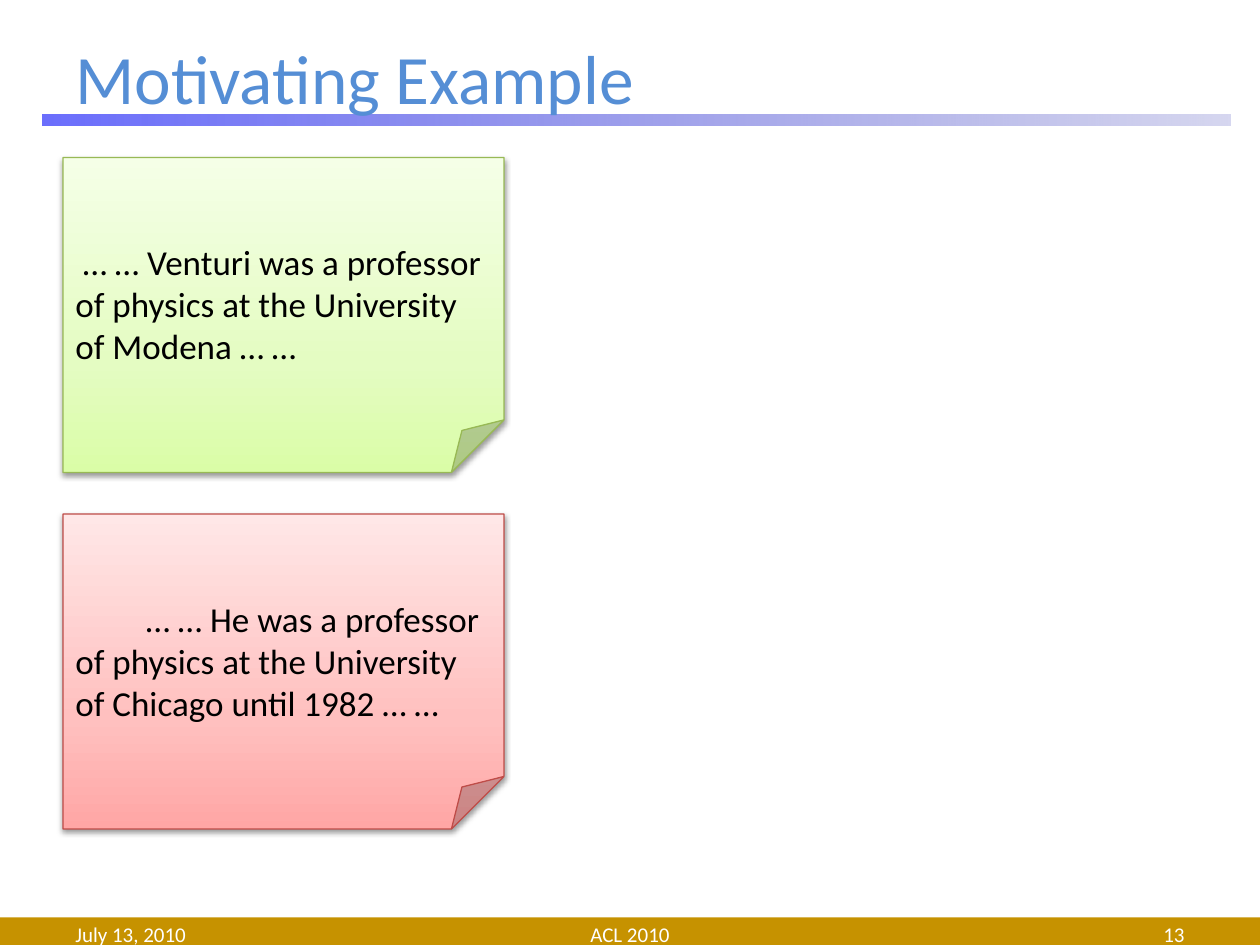
from lxml import etree
from pptx import Presentation
from pptx.dml.color import RGBColor
from pptx.enum.shapes import MSO_SHAPE
from pptx.enum.text import MSO_ANCHOR, PP_ALIGN
from pptx.oxml.ns import qn
from pptx.util import Inches, Pt

RECTANGLE, FOLDED = MSO_SHAPE.RECTANGLE, MSO_SHAPE.FOLDED_CORNER
TOP, MIDDLE = MSO_ANCHOR.TOP, MSO_ANCHOR.MIDDLE
LEFT, CENTER, RIGHT = PP_ALIGN.LEFT, PP_ALIGN.CENTER, PP_ALIGN.RIGHT
FONT = "Calibri"
WHITE, BLACK, BLUE, GOLD = "FFFFFF", "000000", "558ED5", "C69200"
GREEN_STOPS = [(0, "DAFDA7", 100), (35, "E4FCC2", 100), (100, "F5FFE7", 100)]
RED_STOPS = [(0, "FFA6A5", 100), (35, "FFC0BF", 100), (100, "FFE7E7", 100)]
RULE_STOPS = [(0, "464AFC", 80), (100, "3235B4", 20)]


def rgb(value):
    """Turn a hex string into a colour."""
    return RGBColor.from_string(value)


def add_color(parent, value, opacity):
    """Append a colour with an opacity in percent to an XML element."""
    color = etree.SubElement(parent, qn("a:srgbClr"), val=value)
    etree.SubElement(color, qn("a:alpha"), val=str(opacity * 1000))


def write_text(shape, text, size, color, align=LEFT, anchor=MIDDLE, indent=0, top=0.05):
    """Write one formatted paragraph into a shape."""
    frame = shape.text_frame
    frame.word_wrap = True
    frame.vertical_anchor = anchor
    frame.margin_top = Inches(top)
    para = frame.paragraphs[0]
    para.alignment = align
    para._p.get_or_add_pPr().set("indent", str(Inches(indent)))
    span = para.add_run()
    span.text = text
    span.font.name = FONT
    span.font.size = Pt(size)
    span.font.color.rgb = rgb(color)


def add_text(page, box, text, **style):
    """Add a text box with formatted text."""
    shape = page.shapes.add_textbox(*map(Inches, box))
    write_text(shape, text, **style)


def add_panel(page, kind, box):
    """Add a preset shape without line or shadow."""
    shape = page.shapes.add_shape(kind, *map(Inches, box))
    shape.shadow.inherit = False
    shape.line.fill.background()
    return shape


def set_gradient(shape, stops, angle):
    """Fill a shape with a linear gradient of (percent, colour, opacity) stops."""
    shape.fill.gradient()
    gradient = shape._element.spPr.find(qn("a:gradFill"))
    stop_list = gradient.find(qn("a:gsLst"))
    for stop in list(stop_list):
        stop_list.remove(stop)
    for position, color, opacity in stops:
        stop = etree.SubElement(stop_list, qn("a:gs"), pos=str(position * 1000))
        add_color(stop, color, opacity)
    gradient.find(qn("a:lin")).set("ang", str(angle * 60000))


def add_drop_shadow(shape):
    """Give a shape a soft shadow below it."""
    effects = shape._element.spPr.find(qn("a:effectLst"))
    shadow = etree.SubElement(
        effects, qn("a:outerShdw"), blurRad=str(Pt(3.1)), dist=str(Pt(1.6)),
        dir=str(90 * 60000), rotWithShape="0")
    add_color(shadow, BLACK, 38)


def add_header(page, box):
    """Place the title and the fading rule under it."""
    left, top, width, height = box
    rule = add_panel(page, RECTANGLE, (left - 0.16, top + height - 0.01, width + 0.43, 0.09))
    set_gradient(rule, RULE_STOPS, 0)
    add_text(page, box, "Motivating Example", size=39.6, color=BLUE)


def add_footer(page, box):
    """Place the footer band with date, venue and page number."""
    left, top, width, _ = box
    band = add_panel(page, RECTANGLE, box)
    band.fill.solid()
    band.fill.fore_color.rgb = rgb(GOLD)
    margin, side, middle = 0.5, 2.33, 3.17
    for text, x, span_width, align in (
        ("July 13, 2010", left + margin, side, LEFT),
        ("ACL 2010", left + (width - middle) / 2, middle, CENTER),
        ("13", left + width - margin - side, side, RIGHT),
    ):
        add_text(page, (x, top + 0.05, span_width, 0.17), text,
                 size=12, color=WHITE, align=align)


def add_note(page, box, text, stops, edge, indent):
    """Place a folded note with a quotation."""
    note = add_panel(page, FOLDED, box)
    set_gradient(note, stops, 270)
    note.line.color.rgb = rgb(edge)
    note.line.width = Pt(0.75)
    add_drop_shadow(note)
    write_text(note, text, size=20, color=BLACK, anchor=TOP, indent=indent, top=0.66)


def main():
    """Build the slide and save it."""
    deck = Presentation()
    deck.slide_width, deck.slide_height = Inches(10), Inches(7.5)
    page = deck.slides.add_slide(deck.slide_layouts[6])
    add_footer(page, (0, 7.28, 10, 0.25))
    add_header(page, (0.5, 0.3, 9, 0.62))
    add_note(page, (0.5, 1.25, 3.5, 2.5),
             "… … Venturi was a professor of physics at the University of Modena … …",
             GREEN_STOPS, "98B955", 0.06)
    add_note(page, (0.5, 4.08, 3.5, 2.5),
             "… … He was a professor of physics at the University of Chicago until 1982 … …",
             RED_STOPS, "BF4C48", 0.56)
    deck.save("out.pptx")


if __name__ == "__main__":
    main()
